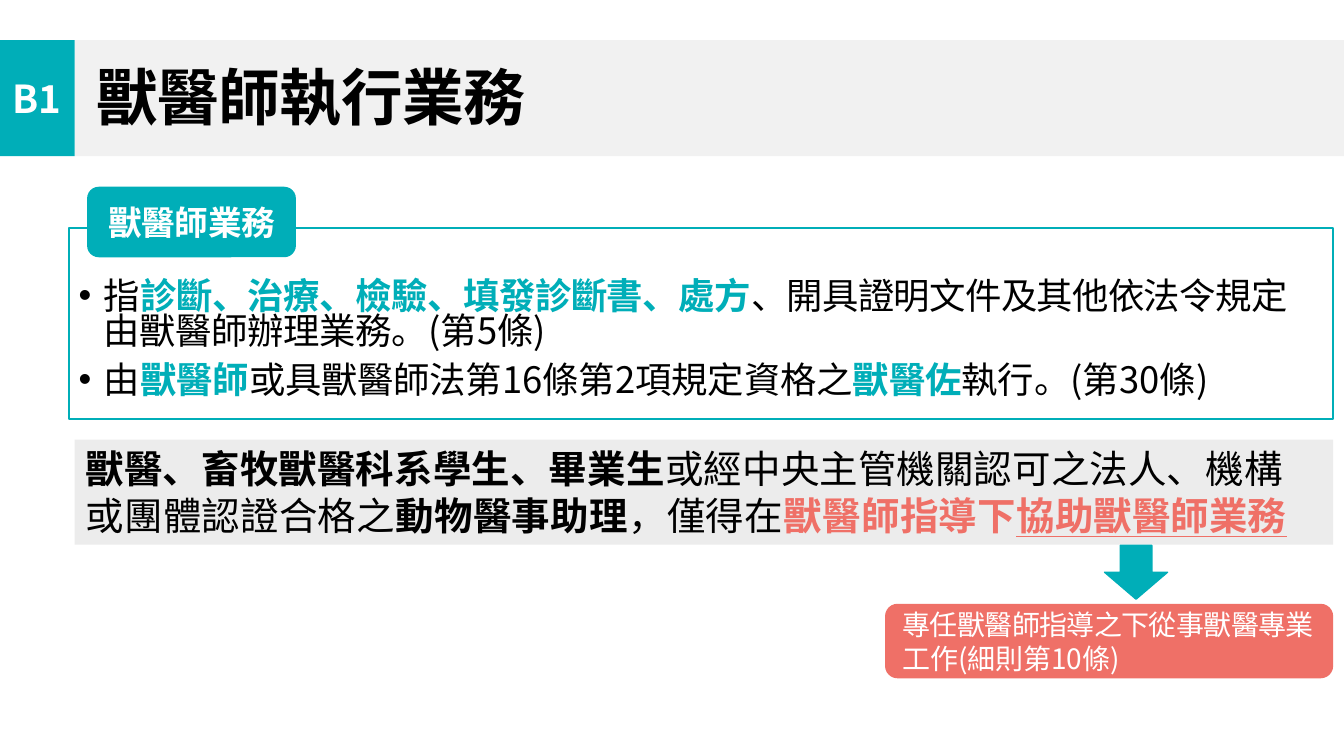
"""Build a slide on who may carry out veterinary practice."""
from lxml import etree
from pptx import Presentation
from pptx.dml.color import RGBColor
from pptx.enum.shapes import MSO_SHAPE
from pptx.enum.text import MSO_ANCHOR, MSO_AUTO_SIZE, PP_ALIGN
from pptx.oxml.ns import qn
from pptx.util import Pt

RECT, ROUND, ARROW = MSO_SHAPE.RECTANGLE, MSO_SHAPE.ROUNDED_RECTANGLE, MSO_SHAPE.DOWN_ARROW
TOP, MIDDLE = MSO_ANCHOR.TOP, MSO_ANCHOR.MIDDLE
LEFT, CENTER = PP_ALIGN.LEFT, PP_ALIGN.CENTER
NO_FIT = MSO_AUTO_SIZE.NONE
FONT = "Noto Sans CJK TC"
COLORS = {"teal": "00AEB8", "coral": "EF7067", "band": "F1F1F1",
          "panel": "ECECEC", "black": "000000", "white": "FFFFFF"}


def rgb(name):
    """Return the named colour."""
    return RGBColor.from_string(COLORS[name])


def add_box(s, kind, box, fill=None, line=None, width=1):
    """Add a preset shape with an optional fill and outline."""
    sp = s.shapes.add_shape(kind, *map(Pt, box))
    sp.shadow.inherit = False
    if fill:
        sp.fill.solid()
        sp.fill.fore_color.rgb = rgb(fill)
    else:
        sp.fill.background()
    if line:
        sp.line.color.rgb = rgb(line)
        sp.line.width = Pt(width)
    else:
        sp.line.fill.background()
    return sp


def place(s, sp, box):
    """Move a placeholder to its box and in front of the shapes so far."""
    sp.left, sp.top, sp.width, sp.height = map(Pt, box)
    s.shapes._spTree.append(sp._element)
    return sp


def set_frame(sp, insets=(0, 0, 0, 0), anchor=TOP):
    """Set wrapping, insets and anchor, and return the text frame."""
    tf = sp.text_frame
    tf.word_wrap = True
    tf.auto_size = NO_FIT
    tf.vertical_anchor = anchor
    tf.margin_left, tf.margin_top, tf.margin_right, tf.margin_bottom = map(Pt, insets)
    return tf


def add_runs(p, size, runs, align=LEFT, before=0, spacing=1.0):
    """Fill a paragraph with (text, colour, bold, tracking, underline) runs."""
    p.alignment = align
    p.space_before = Pt(before)
    p.line_spacing = spacing
    for text, color, bold, tracking, *underline in runs:
        r = p.add_run()
        r.text = text
        r.font.name = FONT
        r.font.size = Pt(size)
        r.font.bold = bold
        r.font.color.rgb = rgb(color)
        if underline:
            r.font.underline = True
        props = r._r.get_or_add_rPr()
        props.set("spc", str(round(tracking * 100)))
        latin = props.find(qn("a:latin"))
        ea = etree.Element(qn("a:ea"), typeface=FONT)
        latin.addnext(ea)


def set_bullet(p, indent, hang):
    """Give a paragraph a hanging bullet."""
    props = p._p.get_or_add_pPr()
    props.set("marL", str(Pt(indent)))
    props.set("indent", str(-Pt(hang)))
    etree.SubElement(props, qn("a:buChar"), char="•")


def add_header(s):
    """Add the title band with its section number."""
    add_box(s, RECT, (53.3, 28.6, 906.7, 83), "band")
    title = place(s, s.shapes.title, (68.4, 41, 850, 55.5))
    add_runs(set_frame(title, (0.7, 1.4, 0, 0)).paragraphs[0], 44,
             [("獸醫師執行業務", "black", True, -0.4)], before=1.3)
    badge = add_box(s, RECT, (0, 28.6, 53.3, 83), "teal")
    add_runs(set_frame(badge, anchor=MIDDLE).paragraphs[0], 27.5,
             [("B1", "white", True, -0.2)], CENTER)


def add_practice(s):
    """Add the framed list of what veterinary practice covers."""
    add_box(s, RECT, (49.4, 162.8, 902.9, 136.6), line="teal", width=1.5)
    label = add_box(s, ROUND, (62.2, 133.4, 149.2, 50.4), "teal")
    add_runs(set_frame(label, anchor=MIDDLE).paragraphs[0], 24,
             [("獸醫師業務", "white", True, -0.2)], CENTER)
    body = place(s, s.placeholders[1], (55.4, 201.5, 878.4, 85))
    tf = set_frame(body)
    items = [
        (0, 0.79, [("指", "black", False, -0.1),
                   ("診斷、治療、檢驗、填發診斷書、處方", "teal", True, -0.4),
                   ("、開具證明文件及其他依法令規定", "black", False, -0.5),
                   ("由獸醫師辦理業務。(第5條)", "black", False, -0.3)]),
        (4.1, 1.0, [("由", "black", False, -0.1),
                    ("獸醫師", "teal", True, -0.2),
                    ("或具獸醫師法第16條第2項規定資格之", "black", False, -0.2),
                    ("獸醫佐", "teal", True, -0.2),
                    ("執行。(第30條)", "black", False, -0.2)]),
    ]
    for i, (before, spacing, runs) in enumerate(items):
        p = tf.add_paragraph() if i else tf.paragraphs[0]
        add_runs(p, 26, runs, before=before, spacing=spacing)
        set_bullet(p, 18.7, 18)


def add_assistants(s):
    """Add the panel on assistants and the note it points to."""
    panel = add_box(s, RECT, (53.3, 314, 899, 75), "panel")
    add_runs(set_frame(panel, (8, 3.6, 18, 0)).paragraphs[0], 27.5, [
        ("獸醫、畜牧獸醫科系學生、畢業生", "black", True, 0.1),
        ("或經中央主管機關認可之法人、機構", "black", False, 0.1),
        ("或團體認證合格之", "black", False, 0.2),
        ("動物醫事助理", "black", True, 0.2),
        ("，僅得在", "black", False, 0.3),
        ("獸醫師指導下", "coral", True, 0.2),
        ("協助獸醫師業務", "coral", True, 0.1, True),
    ], before=3.5, spacing=Pt(33.5))
    add_box(s, ARROW, (789, 389.5, 45, 38.5), "teal", "teal")
    note = add_box(s, ROUND, (632.2, 431.3, 320.1, 53.2), "coral")
    add_runs(set_frame(note, (10, 0, 7, 0), MIDDLE).paragraphs[0], 20, [
        ("專任獸醫師指導之下從事獸醫專業", "white", False, -0.5),
        ("工作(細則第10條)", "white", False, -0.2),
    ])


def main():
    """Build and save the slide."""
    prs = Presentation()
    prs.slide_width, prs.slide_height = Pt(960), Pt(540)
    s = prs.slides.add_slide(prs.slide_layouts[1])
    add_header(s)
    add_practice(s)
    add_assistants(s)
    prs.save("out.pptx")


if __name__ == "__main__":
    main()
